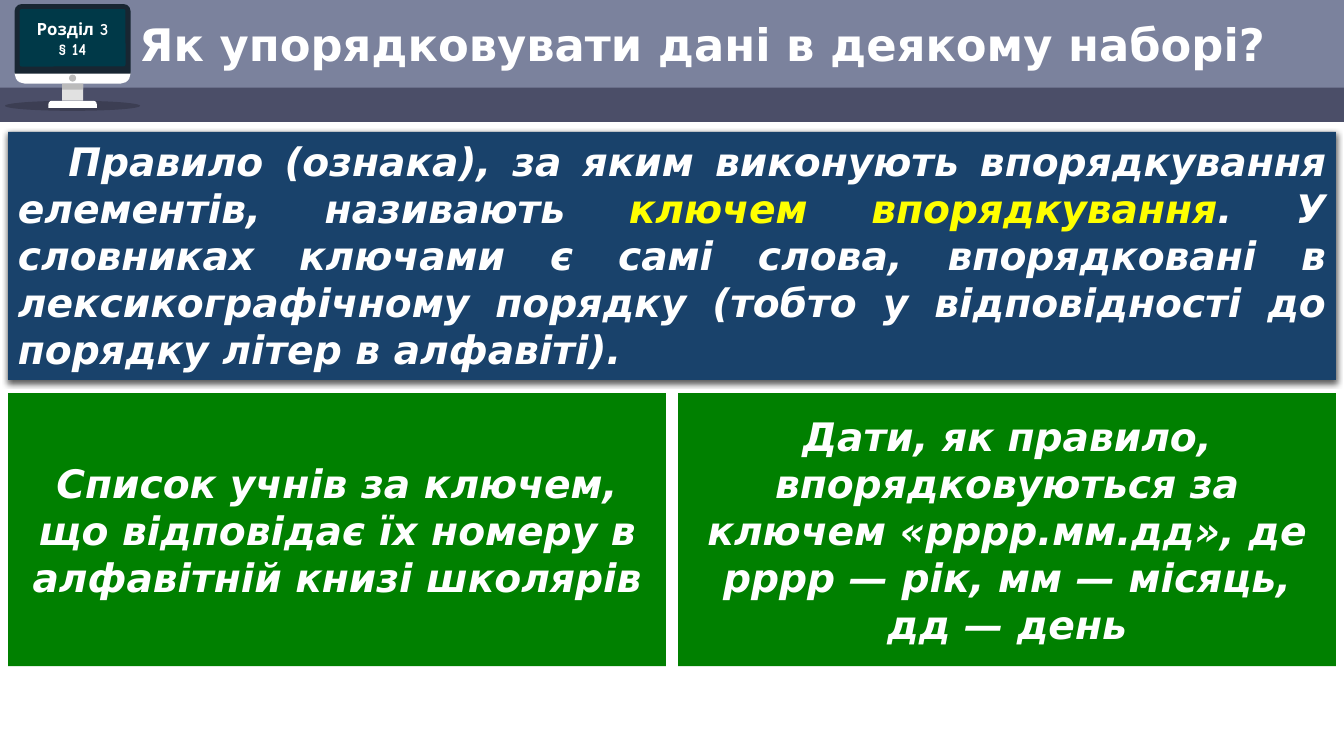
import pptx
import pptx.util
import pptx.dml.color
import pptx.enum.shapes
import pptx.enum.text
import pptx.oxml
import pptx.oxml.ns

Inches = pptx.util.Inches
Pt = pptx.util.Pt
RGBColor = pptx.dml.color.RGBColor
MSO_SHAPE = pptx.enum.shapes.MSO_SHAPE
MSO_ANCHOR = pptx.enum.text.MSO_ANCHOR
PP_ALIGN = pptx.enum.text.PP_ALIGN
qn = pptx.oxml.ns.qn

WHITE = RGBColor(0xFF, 0xFF, 0xFF)
BLACK = RGBColor(0, 0, 0)
YELLOW = RGBColor(0xFF, 0xFF, 0)
GREEN = RGBColor(0, 0x80, 0)
NAVY = RGBColor(0x19, 0x42, 0x6B)
BAND_LIGHT = RGBColor(0x7B, 0x82, 0x9D)
BAND_DARK = RGBColor(0x4B, 0x4E, 0x68)
MONITOR_FRAME = RGBColor(0x18, 0x26, 0x32)
MONITOR_SCREEN = RGBColor(0x00, 0x39, 0x48)
STAND_LIGHT = RGBColor(0xE1, 0xE1, 0xE1)
STAND_DARK = RGBColor(0xBB, 0xBB, 0xBB)

MAIN_FONT = "DejaVu Sans"
BADGE_FONT = "Comic Neue"
SLIDE_WIDTH, SLIDE_HEIGHT = 13.33, 7.5
MARGIN, GAP = 0.08, 0.12
DRAWING_NS = pptx.oxml.ns.nsdecls("a")


def add_block(slide, box, color, preset=MSO_SHAPE.RECTANGLE, corners=()):
    block = slide.shapes.add_shape(preset, *map(Inches, box))
    block.shadow.inherit = False
    block.fill.solid()
    block.fill.fore_color.rgb = color
    block.line.fill.background()
    for index, corner in enumerate(corners):
        block.adjustments[index] = corner
    return block


def write_paragraphs(frame, paragraphs, size, font, align, italic=False):
    frame.word_wrap = True
    for index, runs in enumerate(paragraphs):
        paragraph = frame.add_paragraph() if index else frame.paragraphs[0]
        paragraph.alignment = align
        for words, color in runs:
            run = paragraph.add_run()
            run.text = words
            run.font.size = Pt(size)
            run.font.name = font
            run.font.bold = True
            run.font.italic = italic
            run.font.color.rgb = color


def add_header(slide, box, title_words):
    left, top, width, height = box
    add_block(slide, (left, top, width, 0.91), BAND_LIGHT)
    add_block(slide, (left, top + 0.87, width, height - 0.87), BAND_DARK)
    add_monitor(slide, (left + 0.05, top + 0.04, 1.34, 1.06))

    title = slide.shapes.title
    title.element.getparent().append(title.element)
    title.left, title.top = Inches(left + 1.28), Inches(top + 0.18)
    title.width, title.height = Inches(11.72), Inches(0.58)
    frame = title.text_frame
    frame.auto_size = pptx.enum.text.MSO_AUTO_SIZE.NONE
    frame.vertical_anchor = MSO_ANCHOR.MIDDLE
    write_paragraphs(frame, [[(title_words, WHITE)]], 32, MAIN_FONT, PP_ALIGN.LEFT)
    frame.paragraphs[0].line_spacing = 0.9


def add_monitor(slide, box):
    left, top, width, height = box
    middle = left + width / 2

    def centred(offset, part_width, part_height):
        return middle - part_width / 2, top + offset, part_width, part_height

    floor_shade = add_block(slide, centred(height - 0.1, width, 0.1), BLACK, MSO_SHAPE.OVAL)
    shade_color = floor_shade.element.spPr.find(qn("a:solidFill"))[0]
    shade_color.append(pptx.oxml.parse_xml(f'<a:alpha {DRAWING_NS} val="20000"/>'))
    add_block(slide, centred(0.59, 1.15, 0.2), WHITE, MSO_SHAPE.ROUNDED_RECTANGLE, (0.5,))
    add_block(slide, centred(0, 1.15, 0.69), MONITOR_FRAME,
              MSO_SHAPE.ROUND_2_SAME_RECTANGLE, (0.1, 0))
    add_block(slide, centred(0.79, 0.21, 0.17), STAND_LIGHT)
    add_block(slide, centred(0.79, 0.21, 0.06), STAND_DARK)
    add_block(slide, centred(0.96, 0.48, 0.07), WHITE,
              MSO_SHAPE.ROUND_2_SAME_RECTANGLE, (0.5, 0))
    add_block(slide, centred(0.7, 0.07, 0.07), STAND_DARK, MSO_SHAPE.OVAL)
    add_block(slide, centred(0.05, 1.05, 0.57), MONITOR_SCREEN,
              MSO_SHAPE.ROUNDED_RECTANGLE, (0.036,))

    section = slide.shapes.add_textbox(*map(Inches, centred(0.05, 1.15, 0.59)))
    section.text_frame.vertical_anchor = MSO_ANCHOR.MIDDLE
    write_paragraphs(section.text_frame, [[("Розділ 3", WHITE)], [("§ 14", WHITE)]],
                     12, BADGE_FONT, PP_ALIGN.CENTER)


def add_definition(slide, box, runs):
    definition = add_block(slide, box, NAVY)
    definition.element.spPr.find(qn("a:effectLst")).append(pptx.oxml.parse_xml(
        f'<a:outerShdw {DRAWING_NS} blurRad="{Pt(4.5)}" dist="{Pt(1.5)}" dir="5400000" '
        'algn="ctr" rotWithShape="0"><a:srgbClr val="000000"><a:alpha val="63000"/>'
        '</a:srgbClr></a:outerShdw>'))
    frame = definition.text_frame
    frame.vertical_anchor = MSO_ANCHOR.TOP
    write_paragraphs(frame, [runs], 28, MAIN_FONT, PP_ALIGN.JUSTIFY, italic=True)
    frame.paragraphs[0]._p.get_or_add_pPr().set("indent", str(Inches(0.5)))


def add_examples(slide, box, examples):
    left, top, width, height = box
    card_width = (width - GAP * (len(examples) - 1)) / len(examples)
    for column, lines in enumerate(examples):
        card_left = left + column * (card_width + GAP)
        card = add_block(slide, (card_left, top, card_width, height), GREEN)
        card.text_frame.vertical_anchor = MSO_ANCHOR.MIDDLE
        write_paragraphs(card.text_frame, [[(line, WHITE)] for line in lines],
                         28, MAIN_FONT, PP_ALIGN.CENTER, italic=True)


def main():
    presentation = pptx.Presentation()
    presentation.slide_width = Inches(SLIDE_WIDTH)
    presentation.slide_height = Inches(SLIDE_HEIGHT)
    slide = presentation.slides.add_slide(presentation.slide_layouts[5])
    content_width = SLIDE_WIDTH - 2 * MARGIN

    add_header(slide, (0, 0, SLIDE_WIDTH, 1.21), "Як упорядковувати дані в деякому наборі?")
    add_definition(slide, (MARGIN, 1.31, content_width, 2.46), [
        ("Правило (ознака), за яким виконують впорядкування елементів, називають ", WHITE),
        ("ключем впорядкування", YELLOW),
        (". У словниках ключами є самі слова, впорядковані в лексикографічному порядку "
         "(тобто у відповідності до порядку літер в алфавіті).", WHITE),
    ])
    add_examples(slide, (MARGIN, 3.9, content_width, 2.71), [
        ["Список учнів за ключем, що відповідає їх номеру в алфавітній книзі школярів"],
        ["Дати, як правило, впорядковуються за ключем «рррр.мм.дд», де рррр — рік, "
         "мм — місяць,", "дд — день"],
    ])
    presentation.save("out.pptx")


if __name__ == "__main__":
    main()
